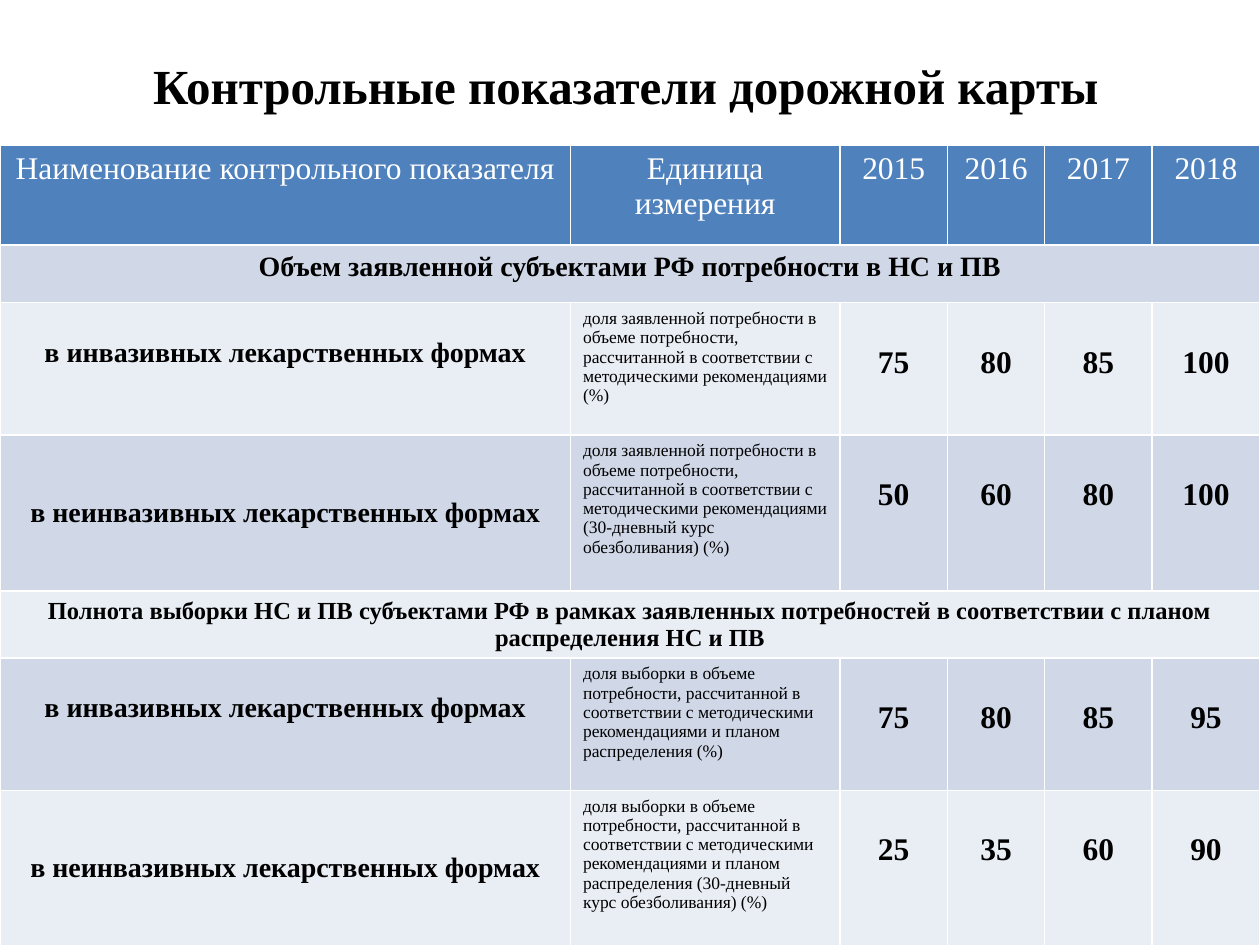
from pptx import Presentation
from pptx import util as u
from pptx.dml.color import RGBColor
from pptx.enum import shapes, text

WHITE = RGBColor(0xFF, 0xFF, 0xFF)
BLACK = RGBColor(0, 0, 0)
BLUE = RGBColor(0x4F, 0x81, 0xBD)
DARK = RGBColor(0xD0, 0xD8, 0xE8)
LIGHT = RGBColor(0xE9, 0xED, 0xF4)

WIDTHS = [326, 154, 61.5, 55.5, 61.5, 61.5]
HEAD = ["Наименование контрольного показателя", "Единица измерения",
        "2015", "2016", "2017", "2018"]
NEED = ("доля заявленной потребности в объеме потребности, рассчитанной "
        "в соответствии с методическими рекомендациями")
PICK = ("доля выборки в объеме потребности, рассчитанной в соответствии "
        "с методическими рекомендациями и планом распределения")
COURSE = "(30-дневный курс обезболивания)"
GROUPS = [
    ("Объем заявленной субъектами РФ потребности в НС и ПВ", 16, 33.1,
     NEED, [75, 80, 85, 100], [50, 60, 80, 100]),
    ("Полнота выборки НС и ПВ субъектами РФ в рамках заявленных потребностей "
     "в соответствии с планом распределения НС и ПВ", 14, 36.7,
     PICK, [75, 80, 85, 95], [25, 35, 60, 90]),
]


class Deck:
    font = "Times New Roman"

    def __init__(self, wide, high):
        self.show = Presentation()
        self.show.slide_width = u.Pt(wide)
        self.show.slide_height = u.Pt(high)
        self.slide = self.show.slides.add_slide(self.show.slide_layouts[6])

    def label(self, frame, words, size, color=BLACK, bold=False, center=True):
        para = frame.paragraphs[0]
        para.alignment = text.PP_ALIGN.CENTER if center else text.PP_ALIGN.LEFT
        run = para.add_run()
        run.text = words
        run.font.name = self.font
        run.font.size = u.Pt(size)
        run.font.bold = bold
        run.font.color.rgb = color

    def title(self, words, left, top, wide, high):
        box = self.slide.shapes.add_shape(
            shapes.MSO_SHAPE.RECTANGLE,
            u.Pt(left), u.Pt(top), u.Pt(wide), u.Pt(high))
        box.shadow.inherit = False
        box.fill.solid()
        box.fill.fore_color.rgb = WHITE
        box.line.fill.background()
        box.text_frame.word_wrap = True
        box.text_frame.vertical_anchor = text.MSO_ANCHOR.MIDDLE
        self.label(box.text_frame, words, 28, bold=True)

    def table(self, left, top, widths, heights):
        frame = self.slide.shapes.add_table(
            len(heights), len(widths), u.Pt(left), u.Pt(top),
            u.Pt(sum(widths)), u.Pt(sum(heights)))
        for col, wide in zip(frame.table.columns, widths):
            col.width = u.Pt(wide)
        for row, high in zip(frame.table.rows, heights):
            row.height = u.Pt(high)
        return frame.table

    def cell(self, cell, words, size, fill, drop=0, **style):
        cell.fill.solid()
        cell.fill.fore_color.rgb = fill
        cell.margin_top = u.Pt(3.6 + drop)
        self.label(cell.text_frame, words, size, **style)

    def band(self, grid, row, words, size, fill):
        first = grid.cell(row, 0)
        first.merge(grid.cell(row, len(grid.columns) - 1))
        self.cell(first, words, size, fill, bold=True)

    def line(self, grid, row, name, drop, unit, values, fill):
        self.cell(grid.cell(row, 0), name, 16, fill, drop, bold=True)
        self.cell(grid.cell(row, 1), unit, 10, fill, center=False)
        for col, value in enumerate(values, 2):
            self.cell(grid.cell(row, col), str(value), 18, fill, 20.7, bold=True)


def main():
    deck = Deck(720, 540)
    deck.title("Контрольные показатели дорожной карты", 20, 26, 675, 45)
    heights = [56.9]
    for group in GROUPS:
        heights += [group[2], 75.6, 89.3]
    grid = deck.table(0, 83, WIDTHS, heights)
    for col, words in enumerate(HEAD):
        deck.cell(grid.cell(0, col), words, 18, BLUE, color=WHITE)
    fills = [LIGHT, DARK]
    for i, (name, size, _, unit, first, second) in enumerate(GROUPS):
        row = 1 + 3 * i
        deck.band(grid, row, name, size, fills[row % 2])
        deck.line(grid, row + 1, "в инвазивных лекарственных формах", 16.1,
                  f"{unit} (%)", first, fills[(row + 1) % 2])
        deck.line(grid, row + 2, "в неинвазивных лекарственных формах", 32.2,
                  f"{unit} {COURSE} (%)", second, fills[row % 2])
    deck.show.save("out.pptx")


if __name__ == "__main__":
    main()
